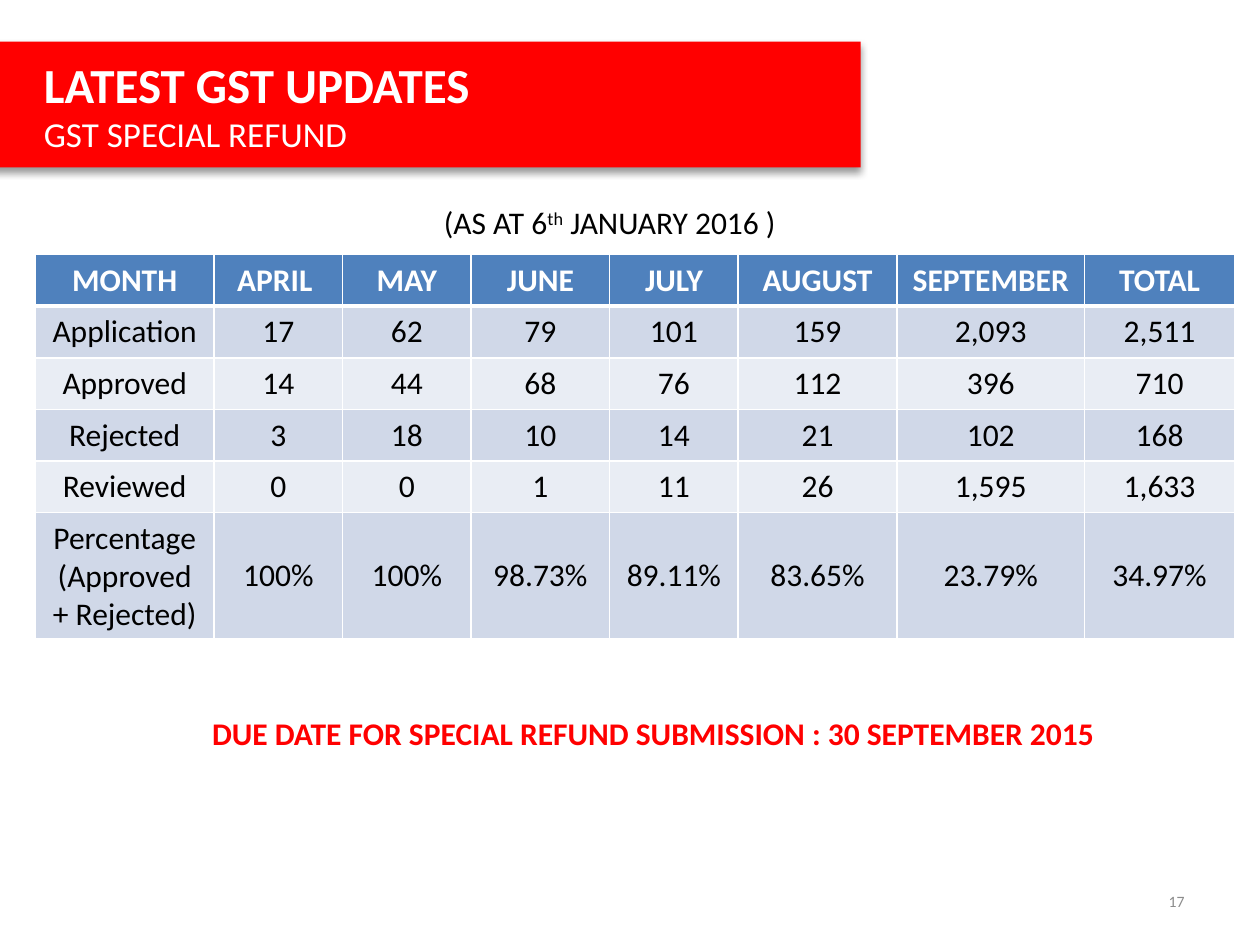
from lxml import etree
from pptx import Presentation
from pptx.dml.color import RGBColor
from pptx.enum.shapes import MSO_SHAPE
from pptx.enum.text import MSO_ANCHOR, PP_ALIGN
from pptx.oxml import parse_xml
from pptx.oxml.ns import nsdecls, qn
from pptx.util import Inches, Pt

RECTANGLE = MSO_SHAPE.RECTANGLE
MIDDLE = MSO_ANCHOR.MIDDLE
LEFT, CENTER, RIGHT = PP_ALIGN.LEFT, PP_ALIGN.CENTER, PP_ALIGN.RIGHT

THEME = {
    "font": "Calibri",
    "red": "FF0000", "white": "FFFFFF", "black": "000000", "grey": "8C8C8C",
    "header": "4F81BD", "bands": ("D0D8E8", "E9EDF4"),
    "title": 28, "subtitle": 20, "body": 18, "small": 9,
    "grid": 1, "header_rule": 3,
}

HEADING = "LATEST GST UPDATES"
SUBHEADING = "GST SPECIAL REFUND"
AS_AT = [("(AS AT 6", {}), ("th", {"superscript": True}), (" JANUARY 2016 )", {})]
DUE_DATE = "DUE DATE FOR SPECIAL REFUND SUBMISSION : 30 SEPTEMBER 2015"
PAGE_NUMBER = "17"
REFUNDS = [
    ("MONTH", "APRIL ", "MAY", "JUNE", "JULY", "AUGUST", "SEPTEMBER", "TOTAL"),
    ("Application", "17", "62", "79", "101", "159", "2,093", "2,511"),
    ("Approved", "14", "44", "68", "76", "112", "396", "710"),
    ("Rejected", "3", "18", "10", "14", "21", "102", "168"),
    ("Reviewed", "0", "0", "1", "11", "26", "1,595", "1,633"),
    ("Percentage\n(Approved + Rejected)", "100%", "100%", "98.73%", "89.11%",
     "83.65%", "23.79%", "34.97%"),
]
COLUMN_WIDTHS = (1.42, 1.02, 1.02, 1.1, 1.02, 1.26, 1.49, 1.19)
ROW_HEIGHTS = (0.41,) * 5 + (1.0,)


def add_run(paragraph, text, size, color, bold=False, superscript=False):
    run = paragraph.add_run()
    run.text = text
    font = run.font
    font.name = THEME["font"]
    font.size = Pt(size)
    font.bold = bold
    font.color.rgb = RGBColor.from_string(color)
    if superscript:
        font._element.set("baseline", "30000")


def add_label(slide, box, runs, size, color, align=CENTER, bold=False):
    frame = slide.shapes.add_textbox(*map(Inches, box)).text_frame
    frame.word_wrap = True
    frame.vertical_anchor = MIDDLE
    paragraph = frame.paragraphs[0]
    paragraph.alignment = align
    for text, style in runs:
        add_run(paragraph, text, size, color, bold, **style)


def add_banner(slide):
    banner = slide.shapes.add_shape(RECTANGLE, *map(Inches, (-0.25, 0.33, 7.08, 1)))
    banner.fill.solid()
    banner.fill.fore_color.rgb = RGBColor.from_string(THEME["red"])
    banner.line.fill.background()
    banner._element.spPr.append(parse_xml(
        f'<a:effectLst {nsdecls("a")}><a:outerShdw blurRad="{Pt(4)}" dist="{Pt(3)}" '
        f'dir="5400000" rotWithShape="0"><a:srgbClr val="{THEME["black"]}">'
        '<a:alpha val="40000"/></a:srgbClr></a:outerShdw></a:effectLst>'))
    frame = banner.text_frame
    frame.word_wrap = True
    frame.vertical_anchor = MIDDLE
    lines = ((HEADING, THEME["title"], True), (SUBHEADING, THEME["subtitle"], False))
    for index, (text, size, bold) in enumerate(lines):
        paragraph = frame.add_paragraph() if index else frame.paragraphs[0]
        paragraph.alignment = LEFT
        paragraph.level = 1
        properties = paragraph._p.get_or_add_pPr()
        properties.set("marL", str(Inches(0.5)))
        properties.set("indent", "0")
        add_run(paragraph, text, size, THEME["white"], bold)


def add_borders(cell, row):
    properties = cell._tc.get_or_add_tcPr()
    heavy_side = {0: "lnB", 1: "lnT"}.get(row)
    for side in ("lnL", "lnR", "lnT", "lnB"):
        width = THEME["header_rule" if side == heavy_side else "grid"]
        line = etree.SubElement(properties, qn(f"a:{side}"), w=str(Pt(width)))
        fill = etree.SubElement(line, qn("a:solidFill"))
        etree.SubElement(fill, qn("a:srgbClr"), val=THEME["white"])


def fill_cell(cell, row, text):
    is_header = row == 0
    add_borders(cell, row)
    cell.fill.solid()
    cell.fill.fore_color.rgb = RGBColor.from_string(
        THEME["header"] if is_header else THEME["bands"][(row - 1) % 2])
    cell.vertical_anchor = MIDDLE
    for index, line in enumerate(text.split("\n")):
        frame = cell.text_frame
        paragraph = frame.add_paragraph() if index else frame.paragraphs[0]
        paragraph.alignment = CENTER
        add_run(paragraph, line, THEME["body"],
                THEME["white" if is_header else "black"], is_header)


def add_refund_table(slide):
    refund_table = slide.shapes.add_table(
        len(REFUNDS), len(COLUMN_WIDTHS), Inches(0.28), Inches(2.02),
        Inches(sum(COLUMN_WIDTHS)), Inches(sum(ROW_HEIGHTS))).table
    for column, width in zip(refund_table.columns, COLUMN_WIDTHS):
        column.width = Inches(width)
    for row, (values, height) in enumerate(zip(REFUNDS, ROW_HEIGHTS)):
        refund_table.rows[row].height = Inches(height)
        for column, text in enumerate(values):
            fill_cell(refund_table.cell(row, column), row, text)


def main():
    deck = Presentation()
    deck.slide_width, deck.slide_height = Inches(10), Inches(7.5)
    slide = deck.slides.add_slide(deck.slide_layouts[6])
    add_label(slide, (2.24, 1.53, 5.2, 0.47), AS_AT, THEME["body"], THEME["black"])
    add_refund_table(slide)
    add_label(slide, (1.17, 5.5, 8.03, 0.63), [(DUE_DATE, {})],
              THEME["body"], THEME["red"], bold=True)
    add_banner(slide)
    add_label(slide, (7.17, 6.95, 2.33, 0.4), [(PAGE_NUMBER, {})],
              THEME["small"], THEME["grey"], RIGHT)
    deck.save("out.pptx")


if __name__ == "__main__":
    main()
